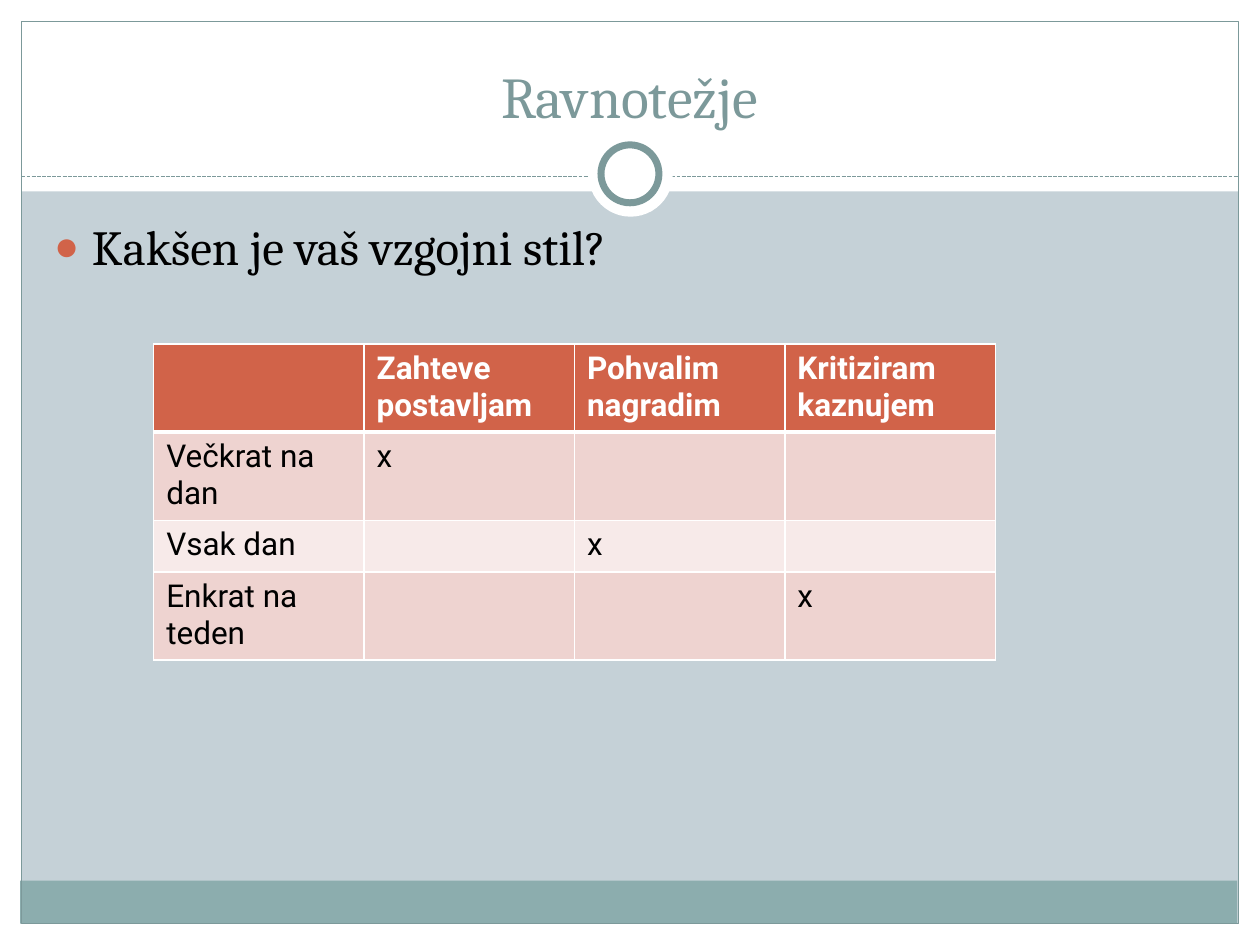
from dataclasses import dataclass

from lxml import etree
from pptx import Presentation
from pptx.dml.color import RGBColor
from pptx.enum.dml import MSO_LINE
from pptx.enum.shapes import MSO_CONNECTOR, MSO_SHAPE
from pptx.enum.text import MSO_ANCHOR, PP_ALIGN
from pptx.oxml.ns import qn
from pptx.util import Inches, Pt

RECTANGLE = MSO_SHAPE.RECTANGLE
OVAL = MSO_SHAPE.OVAL
STRAIGHT = MSO_CONNECTOR.STRAIGHT
DASH = MSO_LINE.SQUARE_DOT
BOTTOM, TOP = MSO_ANCHOR.BOTTOM, MSO_ANCHOR.TOP
CENTER, LEFT = PP_ALIGN.CENTER, PP_ALIGN.LEFT


@dataclass(frozen=True)
class Theme:
    """Colours, fonts and type sizes of the slide."""
    background: str = "C5D1D7"
    white: str = "FFFFFF"
    black: str = "000000"
    frame: str = "7C999A"
    footer: str = "8CADAE"
    accent: str = "D16349"
    band_dark: str = "EED3D0"
    band_light: str = "F7EAE9"
    serif: str = "Cambria"
    sans: str = "Roboto"
    title_size: float = 33
    body_size: float = 28
    table_size: float = 18


THEME = Theme()

TABLE_ROWS = [
    [[], ["Zahteve postavljam"], ["Pohvalim", "nagradim"], ["Kritiziram", "kaznujem"]],
    [["Večkrat na dan"], ["x"], [], []],
    [["Vsak dan"], [], ["x"], []],
    [["Enkrat na teden"], [], [], ["x"]],
]
ROW_HEIGHTS = [0.7, 0.7, 0.41, 0.7]
COLUMN_WIDTH = 1.67


def rgb(color):
    """Turn a hex string into a colour."""
    return RGBColor.from_string(color)


def add_panel(slide, kind, bounds, fill=None, line=None, width=0.75):
    """Add a plain shape with an optional fill and outline."""
    panel = slide.shapes.add_shape(kind, *map(Inches, bounds))
    panel.shadow.inherit = False
    if fill:
        panel.fill.solid()
        panel.fill.fore_color.rgb = rgb(fill)
    else:
        panel.fill.background()
    if line:
        panel.line.color.rgb = rgb(line)
        panel.line.width = Pt(width)
    else:
        panel.line.fill.background()


def add_divider(slide, left, right, top):
    """Add the dashed line below the title."""
    divider = slide.shapes.add_connector(
        STRAIGHT, Inches(left), Inches(top), Inches(right), Inches(top))
    divider.line.color.rgb = rgb(THEME.frame)
    divider.line.width = Pt(0.75)
    divider.line.dash_style = DASH
    etree.SubElement(divider.element.spPr, qn("a:effectLst"))


def add_span(para, text, font, size, color, bold=False):
    """Add one formatted run to a paragraph."""
    span = para.add_run()
    span.text = text
    span.font.name = font
    span.font.size = Pt(size)
    span.font.bold = bold
    span.font.color.rgb = rgb(color)


def place_text(box, bounds, anchor, align):
    """Move a placeholder to the front and return its first paragraph."""
    box.left, box.top, box.width, box.height = map(Inches, bounds)
    box.element.getparent().append(box.element)
    box.text_frame.word_wrap = True
    box.text_frame.vertical_anchor = anchor
    para = box.text_frame.paragraphs[0]
    para.alignment = align
    return para


def add_bullet(para, size):
    """Give a paragraph a round accent bullet with a hanging indent."""
    para.space_before = Pt(size * 0.2)
    properties = para._p.get_or_add_pPr()
    properties.set("marL", str(Inches(0.3)))
    properties.set("indent", str(Inches(-0.3)))
    color = etree.SubElement(properties, qn("a:buClr"))
    etree.SubElement(color, qn("a:srgbClr"), val=THEME.accent)
    etree.SubElement(properties, qn("a:buSzPct"), val="85000")
    etree.SubElement(properties, qn("a:buChar"), char="●")


def set_borders(cell, bottom_width):
    """Draw white borders around a cell."""
    properties = cell._tc.get_or_add_tcPr()
    for side, width in (("L", 1), ("R", 1), ("T", 1), ("B", bottom_width)):
        border = etree.SubElement(properties, qn(f"a:ln{side}"), w=str(Pt(width)))
        fill = etree.SubElement(border, qn("a:solidFill"))
        etree.SubElement(fill, qn("a:srgbClr"), val=THEME.white)


def fill_cell(cell, lines, fill, color, header):
    """Write and format one table cell."""
    set_borders(cell, 3 if header else 1)
    cell.fill.solid()
    cell.fill.fore_color.rgb = rgb(fill)
    frame = cell.text_frame
    for index, line in enumerate(lines):
        para = frame.add_paragraph() if index else frame.paragraphs[0]
        add_span(para, line, THEME.sans, THEME.table_size, color, header)


def add_style_table(slide, left, top):
    """Add the table of parenting habits."""
    columns = len(TABLE_ROWS[0])
    table = slide.shapes.add_table(
        len(TABLE_ROWS), columns, Inches(left), Inches(top),
        Inches(columns * COLUMN_WIDTH), Inches(sum(ROW_HEIGHTS))).table
    for column in table.columns:
        column.width = Inches(COLUMN_WIDTH)
    for row, (height, texts) in enumerate(zip(ROW_HEIGHTS, TABLE_ROWS)):
        table.rows[row].height = Inches(height)
        header = row == 0
        band = THEME.band_dark if row % 2 else THEME.band_light
        fill = THEME.accent if header else band
        color = THEME.white if header else THEME.black
        for column, lines in enumerate(texts):
            fill_cell(table.cell(row, column), lines, fill, color, header)


def add_backdrop(slide):
    """Add the white margins, footer band, frame, divider and ring."""
    slide.background.fill.solid()
    slide.background.fill.fore_color.rgb = rgb(THEME.background)
    for bounds in ((0, 7.33, 10, 0.17), (0, 0, 10, 1.52),
                   (0, 0, 0.17, 7.5), (9.83, 0, 0.17, 7.5)):
        add_panel(slide, RECTANGLE, bounds, THEME.white)
    add_panel(slide, RECTANGLE, (0.16, 6.99, 9.66, 0.34), THEME.footer)
    add_panel(slide, RECTANGLE, (0.17, 0.17, 9.66, 7.16), line=THEME.frame)
    add_divider(slide, 0.17, 9.83, 1.4)
    add_panel(slide, OVAL, (4.67, 1.05, 0.67, 0.67), THEME.white)
    add_panel(slide, OVAL, (4.77, 1.15, 0.46, 0.46), THEME.white, THEME.frame, 4)


def main():
    """Build and save the slide."""
    deck = Presentation()
    deck.slide_width, deck.slide_height = Inches(10), Inches(7.5)
    slide = deck.slides.add_slide(deck.slide_layouts[1])
    add_backdrop(slide)
    title = place_text(slide.shapes.title, (0.33, 0.25, 9.33, 0.83), BOTTOM, CENTER)
    add_span(title, "Ravnotežje", THEME.serif, THEME.title_size, THEME.frame)
    body = place_text(slide.placeholders[1], (0.33, 1.67, 9.3, 5), TOP, LEFT)
    add_bullet(body, THEME.body_size)
    add_span(body, "Kakšen je vaš vzgojni stil?",
             THEME.serif, THEME.body_size, THEME.black)
    add_style_table(slide, 1.22, 2.73)
    deck.save("out.pptx")


if __name__ == "__main__":
    main()
